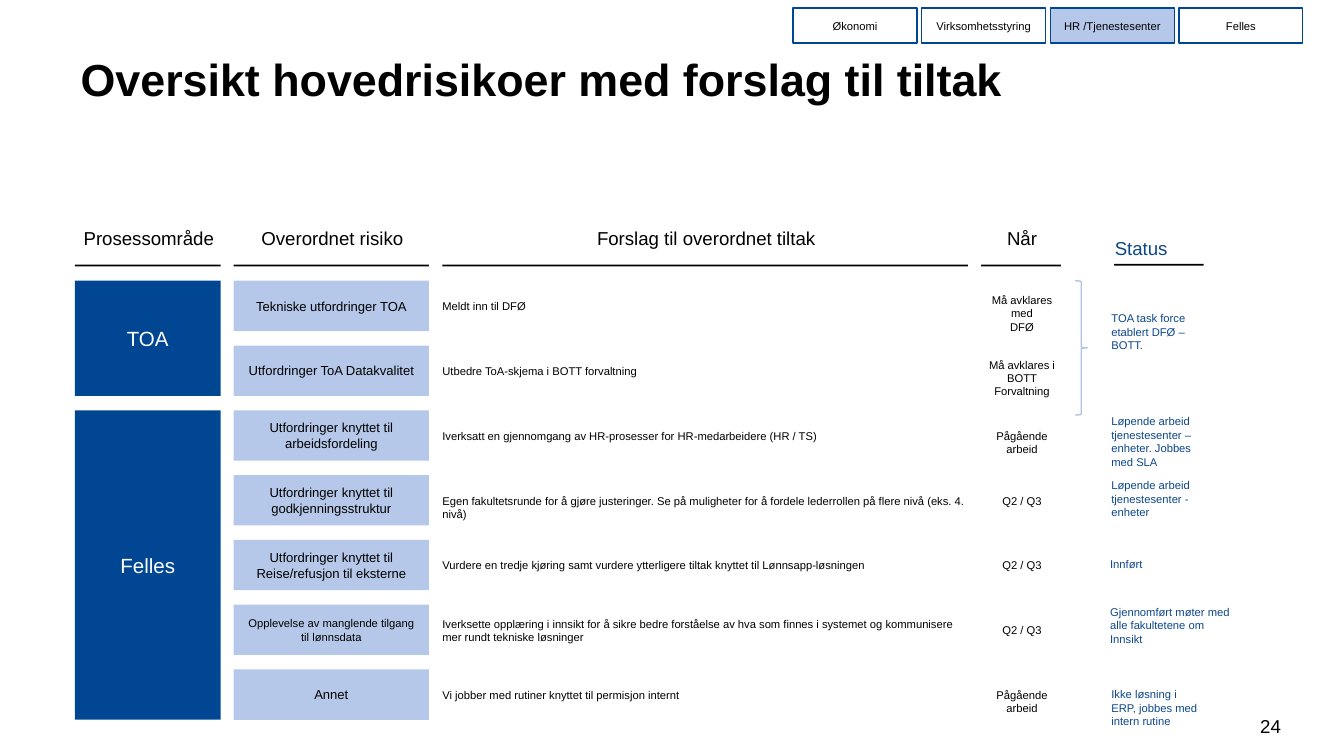
from copy import deepcopy
from dataclasses import dataclass

from pptx import Presentation
from pptx import util as u
from pptx.dml.color import RGBColor
from pptx.enum import shapes, text
from pptx.oxml import ns


@dataclass(frozen=True)
class Theme:
    """Colours, font and type sizes of the deck."""

    font: str = "Arial"
    black: str = "000000"
    white: str = "FFFFFF"
    navy: str = "014693"
    pale: str = "B6C8E9"
    brace: str = "B1C3E5"
    status: str = "0C4789"
    title: float = 24
    group: float = 11
    heading: float = 10
    risk: float = 7
    small: float = 6


THEME = Theme()
LINE_HEIGHT = 1.15
ROW_TOP, ROW_PITCH, ROW_HEIGHT = 150.4, 34.7, 27
HEADING_TOP, RULE_TOP, RULE_HEIGHT = 121.7, 141.8, 0.9
AREA, RISK, ACTION, WHEN = (40.2, 78), (125.2, 104.6), (237, 281.5), (525.6, 42.8)

HEADINGS = [
    ("Prosessområde", AREA),
    ("Overordnet risiko", RISK),
    ("Forslag til overordnet tiltak", ACTION),
    ("Når", WHEN),
]
AREAS = [("TOA", 0, 1), ("Felles", 2, 6)]
ROWS = [
    ("Tekniske utfordringer TOA", THEME.risk,
     "Meldt inn til DFØ", 1, "Må avklares med\nDFØ"),
    ("Utfordringer ToA Datakvalitet", THEME.risk,
     "Utbedre ToA-skjema i BOTT forvaltning", 1, "Må avklares i\nBOTT Forvaltning"),
    ("Utfordringer knyttet til\narbeidsfordeling", THEME.risk,
     "Iverksatt en gjennomgang av HR-prosesser for HR-medarbeidere (HR / TS)", 1,
     "Pågående arbeid"),
    ("Utfordringer knyttet til\ngodkjenningsstruktur", THEME.risk,
     "Egen fakultetsrunde for å gjøre justeringer. Se på muligheter for å fordele "
     "lederrollen på flere nivå (eks. 4. nivå)", 1, "Q2 / Q3"),
    ("Utfordringer knyttet til\nReise/refusjon til eksterne", THEME.risk,
     "Vurdere en tredje kjøring samt vurdere ytterligere tiltak knyttet til "
     "Lønnsapp-løsningen", 1, "Q2 / Q3"),
    ("Opplevelse av manglende tilgang\ntil lønnsdata", THEME.small,
     "Iverksette opplæring i innsikt for å sikre bedre forståelse av hva som finnes i "
     "systemet og kommunisere mer rundt tekniske løsninger", 2, "Q2 / Q3"),
    ("Annet", THEME.risk,
     "Vi jobber med rutiner knyttet til permisjon internt", 1, "Pågående arbeid"),
]
STATUSES = [
    ("TOA task force etablert DFØ – BOTT.", 595.4, 167, 49),
    ("Løpende arbeid tjenestesenter – enheter. Jobbes med SLA", 595.4, 222.2, 49),
    ("Løpende arbeid tjenestesenter - enheter", 595.4, 256.4, 49),
    ("Innført", 594.7, 298.8, 49),
    ("Gjennomført møter med alle fakultetene om Innsikt", 594.7, 324.3, 66.2),
    ("Ikke løsning i ERP, jobbes med intern rutine", 595.4, 368.4, 49),
]
TABS = ["Økonomi", "Virksomhetsstyring", "HR /Tjenestesenter", "Felles"]
ACTIVE_TAB = "HR /Tjenestesenter"


def write(frame, content, *, size, color=THEME.black, bold=False, center=False,
          middle=False, inset=(0, 0)):
    """Put formatted text in a frame."""
    frame.word_wrap = True
    frame.auto_size = text.MSO_AUTO_SIZE.NONE
    frame.margin_left = frame.margin_right = u.Pt(inset[0])
    frame.margin_top = frame.margin_bottom = u.Pt(inset[1])
    anchors = text.MSO_ANCHOR
    frame.vertical_anchor = anchors.MIDDLE if middle else anchors.TOP
    para = frame.paragraphs[0]
    para.text = content
    para.alignment = text.PP_ALIGN.CENTER if center else text.PP_ALIGN.LEFT
    for span in para.runs:
        span.font.name, span.font.size, span.font.bold = THEME.font, u.Pt(size), bold
        span.font.color.rgb = RGBColor.from_string(color)
    for line_break in para._p.findall(ns.qn("a:br")):
        line_break.insert(0, deepcopy(para.runs[0]._r.rPr))


class Page:
    """Style and current slide, with a method for each kind of element."""

    def __init__(self, deck, theme):
        """Add a title-only slide to the deck."""
        self.theme = theme
        self.slide = deck.slides.add_slide(deck.slide_layouts[5])

    def title(self, content, left, top, width, height):
        """Fill and place the title placeholder."""
        box = self.slide.shapes.title
        box.left, box.top, box.width, box.height = map(u.Pt, (left, top, width, height))
        write(box.text_frame, content, size=self.theme.title, bold=True,
              middle=True, inset=(7.2, 3.6))

    def label(self, content, left, top, width, height, **style):
        """Add a text box."""
        box = self.slide.shapes.add_textbox(*map(u.Pt, (left, top, width, height)))
        write(box.text_frame, content, **style)

    def shape(self, left, top, width, height, *, fill=None, line=None,
              kind=shapes.MSO_SHAPE.RECTANGLE):
        """Add a flat preset shape and return it."""
        box = self.slide.shapes.add_shape(kind, *map(u.Pt, (left, top, width, height)))
        box.shadow.inherit = False
        if fill:
            box.fill.solid()
            box.fill.fore_color.rgb = RGBColor.from_string(fill)
        else:
            box.fill.background()
        if line:
            box.line.color.rgb = RGBColor.from_string(line)
            box.line.width = u.Pt(0.75)
        else:
            box.line.fill.background()
        return box

    def block(self, content, left, top, width, height, *, size, color=THEME.black,
              fill=None, line=None):
        """Add a rectangle with centred text."""
        box = self.shape(left, top, width, height, fill=fill, line=line)
        write(box.text_frame, content, size=size, color=color, center=True,
              middle=True, inset=(3.6, 0))

    def rule(self, left, top, width):
        """Add a thin black bar below a heading."""
        self.shape(left, top, width, RULE_HEIGHT, fill=self.theme.black)

    def cell(self, content, column, row, lines, center=False):
        """Add small text set around the middle of a row."""
        left, width = column
        height = lines * self.theme.small * LINE_HEIGHT
        top = ROW_TOP + row * ROW_PITCH + (ROW_HEIGHT - height) / 2
        self.label(content, left, top, width + 1, height,
                   size=self.theme.small, center=center)


def main():
    """Build the risk overview and save it."""
    deck = Presentation()
    deck.slide_width, deck.slide_height = u.Pt(720), u.Pt(405)
    page = Page(deck, THEME)
    page.title("Oversikt hovedrisikoer med forslag til tiltak", 36, 24, 600, 36.7)

    for index, name in enumerate(TABS):
        page.block(name, 424.9 + index * 68.9, 4.3, 66.4, 18.8, size=THEME.small,
                   line=THEME.navy, fill=THEME.pale if name == ACTIVE_TAB else None)

    for name, (left, width) in HEADINGS:
        page.label(name, left, HEADING_TOP, width + 1, 11.5,
                   size=THEME.heading, center=True)
        page.rule(left, RULE_TOP, width)

    for name, first, last in AREAS:
        page.block(name, AREA[0], ROW_TOP + first * ROW_PITCH, AREA[1],
                   (last - first) * ROW_PITCH + ROW_HEIGHT, size=THEME.group,
                   color=THEME.white, fill=THEME.navy)

    for row, (risk, size, action, lines, when) in enumerate(ROWS):
        page.block(risk, RISK[0], ROW_TOP + row * ROW_PITCH, RISK[1], ROW_HEIGHT,
                   size=size, fill=THEME.pale)
        page.cell(action, ACTION, row, lines)
        page.cell(when, WHEN, row, when.count("\n") + 1, center=True)

    page.label("Status", 586.8, 126.7, 49, 12.2, size=THEME.heading,
               color=THEME.status, center=True)
    page.rule(596.9, 141.4, 48)
    for content, left, top, width in STATUSES:
        page.label(content, left, top, width, 14.4, size=THEME.small,
                   color=THEME.status)
    page.shape(576, ROW_TOP, 6.5, 72, line=THEME.brace,
               kind=shapes.MSO_SHAPE.RIGHT_BRACE)
    page.label("24", 667.4, 379.4, 26.6, 21.6, size=THEME.heading, center=True,
               inset=(3.6, 3.6))
    deck.save("out.pptx")


if __name__ == "__main__":
    main()
